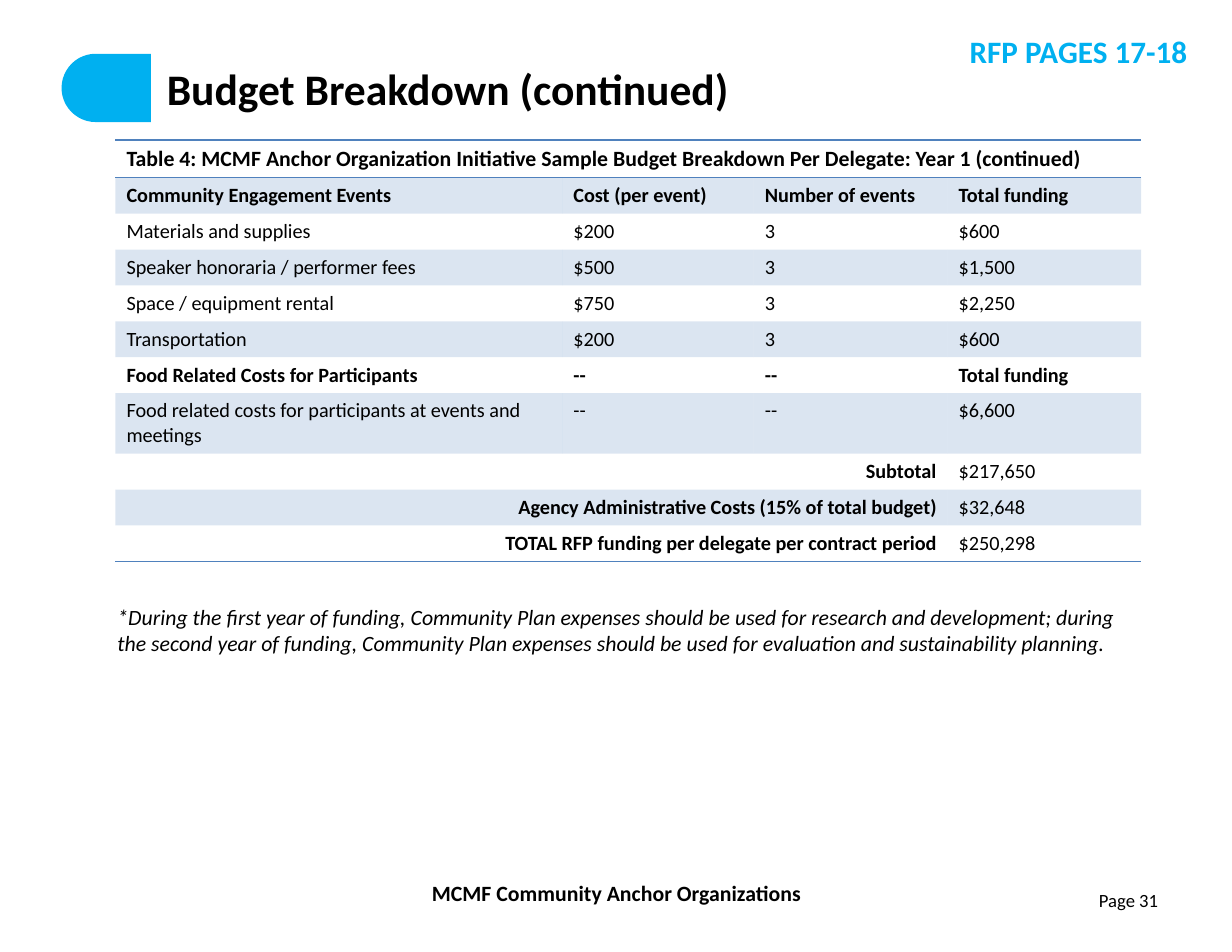
from typing import NamedTuple

from lxml import etree
from pptx import Presentation
from pptx.dml.color import RGBColor
from pptx.enum import shapes, text
from pptx.oxml import ns
from pptx.util import Inches, Pt

BLACK = RGBColor(0x00, 0x00, 0x00)
WHITE = RGBColor(0xFF, 0xFF, 0xFF)
CYAN = RGBColor(0x00, 0xB0, 0xF0)
TABLE_BLUE = RGBColor(0x4F, 0x81, 0xBD)
FONT = "Calibri"
LEFT, RIGHT, CENTER = text.PP_ALIGN.LEFT, text.PP_ALIGN.RIGHT, text.PP_ALIGN.CENTER
NO_TABLE_STYLE = "{2D5ABB26-0587-4C30-8999-92F81FD0307C}"


class Box(NamedTuple):
    left: float
    top: float
    width: float
    height: float

    def lengths(self):
        return [Inches(value) for value in self]


class Style(NamedTuple):
    size: float
    bold: bool = False
    italic: bool = False
    color: RGBColor = BLACK
    align: text.PP_ALIGN = LEFT


class Label(NamedTuple):
    box: Box
    wording: str
    style: Style


class BudgetRow(NamedTuple):
    """One table row; a single wording before the total spans the first columns."""
    cells: tuple
    bold: bool = False


LABELS = [
    Label(Box(2.66, 7.81, 5.69, 0.34), "MCMF Community Anchor Organizations",
          Style(14, bold=True, align=CENTER)),
    Label(Box(7.88, 7.89, 2.56, 0.45), "Page 31", Style(12, align=RIGHT)),
    Label(Box(5.18, 0.24, 5.52, 0.44), "RFP PAGES 17-18",
          Style(20, bold=True, color=CYAN, align=RIGHT)),
    Label(Box(0.95, 5.34, 9.4, 0.57),
          "*During the first year of funding, Community Plan expenses should be used for "
          "research and development; during the second year of funding, Community Plan "
          "expenses should be used for evaluation and sustainability planning.",
          Style(14, italic=True)),
]

TABLE_BOX = Box(1.03, 1.25, 9.16, 3.41)
COLUMN_WIDTHS = (3.99, 1.71, 1.73, 1.73)
TABLE_TITLE = ("Table 4: MCMF Anchor Organization Initiative Sample Budget Breakdown "
               "Per Delegate: Year 1 (continued)")
ROWS = [
    BudgetRow(("Community Engagement Events", "Cost (per event)", "Number of events",
               "Total funding"), bold=True),
    BudgetRow(("Materials and supplies", "$200", "3", "$600")),
    BudgetRow(("Speaker honoraria / performer fees", "$500", "3", "$1,500")),
    BudgetRow(("Space / equipment rental", "$750", "3", "$2,250")),
    BudgetRow(("Transportation", "$200", "3", "$600")),
    BudgetRow(("Food Related Costs for Participants", "--", "--", "Total funding"), bold=True),
    BudgetRow(("Food related costs for participants at events and meetings", "--", "--",
               "$6,600")),
    BudgetRow(("Subtotal", "$217,650")),
    BudgetRow(("Agency Administrative Costs (15% of total budget)", "$32,648")),
    BudgetRow(("TOTAL RFP funding per delegate per contract period", "$250,298")),
]


def write(frame, wording: str, style: Style) -> None:
    paragraph = frame.paragraphs[0]
    paragraph.alignment = style.align
    run = paragraph.add_run()
    run.text = wording
    run.font.name = FONT
    run.font.size = Pt(style.size)
    run.font.bold = style.bold
    run.font.italic = style.italic
    run.font.color.rgb = style.color


def add_label(slide, label: Label) -> None:
    frame = slide.shapes.add_textbox(*label.box.lengths()).text_frame
    frame.word_wrap = True
    write(frame, label.wording, label.style)


def add_block(slide, kind, box: Box, color: RGBColor):
    shape = slide.shapes.add_shape(kind, *box.lengths())
    shape.shadow.inherit = False
    shape.fill.solid()
    shape.fill.fore_color.rgb = color
    shape.line.fill.background()
    return shape


def add_heading(slide) -> None:
    pill = add_block(slide, shapes.MSO_SHAPE.ROUNDED_RECTANGLE, Box(0.55, 0.48, 8.44, 0.61), CYAN)
    pill.adjustments[0] = 0.5
    cover = add_block(slide, shapes.MSO_SHAPE.RECTANGLE, Box(1.36, 0.41, 7.67, 0.86), WHITE)
    cover.line.color.rgb = WHITE
    cover.line.width = Pt(2)

    title = slide.shapes.title
    title.left, title.top, title.width, title.height = Box(1.38, 0.51, 9.07, 0.55).lengths()
    frame = title.text_frame
    frame.auto_size = text.MSO_AUTO_SIZE.NONE
    frame.vertical_anchor = text.MSO_ANCHOR.MIDDLE
    frame.margin_left = frame.margin_right = Inches(0.11)
    frame.margin_top = frame.margin_bottom = Inches(0.06)
    write(frame, "Budget Breakdown (continued)", Style(28, bold=True))
    # Keep the title in front of the heading blocks.
    slide.shapes._spTree.append(title._element)


def add_border(cell, side: str) -> None:
    line = etree.SubElement(cell._tc.get_or_add_tcPr(), ns.qn(f"a:{side}"), w=str(Pt(1)))
    fill = etree.SubElement(line, ns.qn("a:solidFill"))
    etree.SubElement(fill, ns.qn("a:srgbClr"), val=str(TABLE_BLUE))


def fill_band(cell) -> None:
    cell.fill.solid()
    cell.fill.fore_color.rgb = TABLE_BLUE
    color = cell._tc.tcPr.find(".//" + ns.qn("a:solidFill") + "/" + ns.qn("a:srgbClr"))
    etree.SubElement(color, ns.qn("a:alpha"), val="20000")


def add_budget_table(slide) -> None:
    row_count, column_count = len(ROWS) + 1, len(COLUMN_WIDTHS)
    table = slide.shapes.add_table(row_count, column_count, *TABLE_BOX.lengths()).table
    table._tbl.tblPr.find(ns.qn("a:tableStyleId")).text = NO_TABLE_STYLE
    table.first_row = table.horz_banding = False
    for column, width in zip(table.columns, COLUMN_WIDTHS):
        column.width = Inches(width)

    for cell in table.rows[0].cells:
        add_border(cell, "lnT")
        add_border(cell, "lnB")
        cell.fill.background()
    table.cell(0, 0).merge(table.cell(0, column_count - 1))
    write(table.cell(0, 0).text_frame, TABLE_TITLE, Style(14, bold=True))

    for index, row in enumerate(ROWS, start=1):
        for cell in table.rows[index].cells:
            if index == row_count - 1:
                add_border(cell, "lnB")
            if index % 2:
                fill_band(cell)
            else:
                cell.fill.background()
        if len(row.cells) == column_count:
            for column, wording in enumerate(row.cells):
                write(table.cell(index, column).text_frame, wording, Style(13, bold=row.bold))
        else:
            caption, total = row.cells
            table.cell(index, 0).merge(table.cell(index, column_count - 2))
            write(table.cell(index, 0).text_frame, caption, Style(13, bold=True, align=RIGHT))
            write(table.cell(index, column_count - 1).text_frame, total, Style(13))


def main() -> None:
    presentation = Presentation()
    presentation.slide_width = Inches(11)
    presentation.slide_height = Inches(8.5)
    slide = presentation.slides.add_slide(presentation.slide_layouts[5])
    add_heading(slide)
    add_budget_table(slide)
    for label in LABELS:
        add_label(slide, label)
    presentation.save("out.pptx")


if __name__ == "__main__":
    main()
